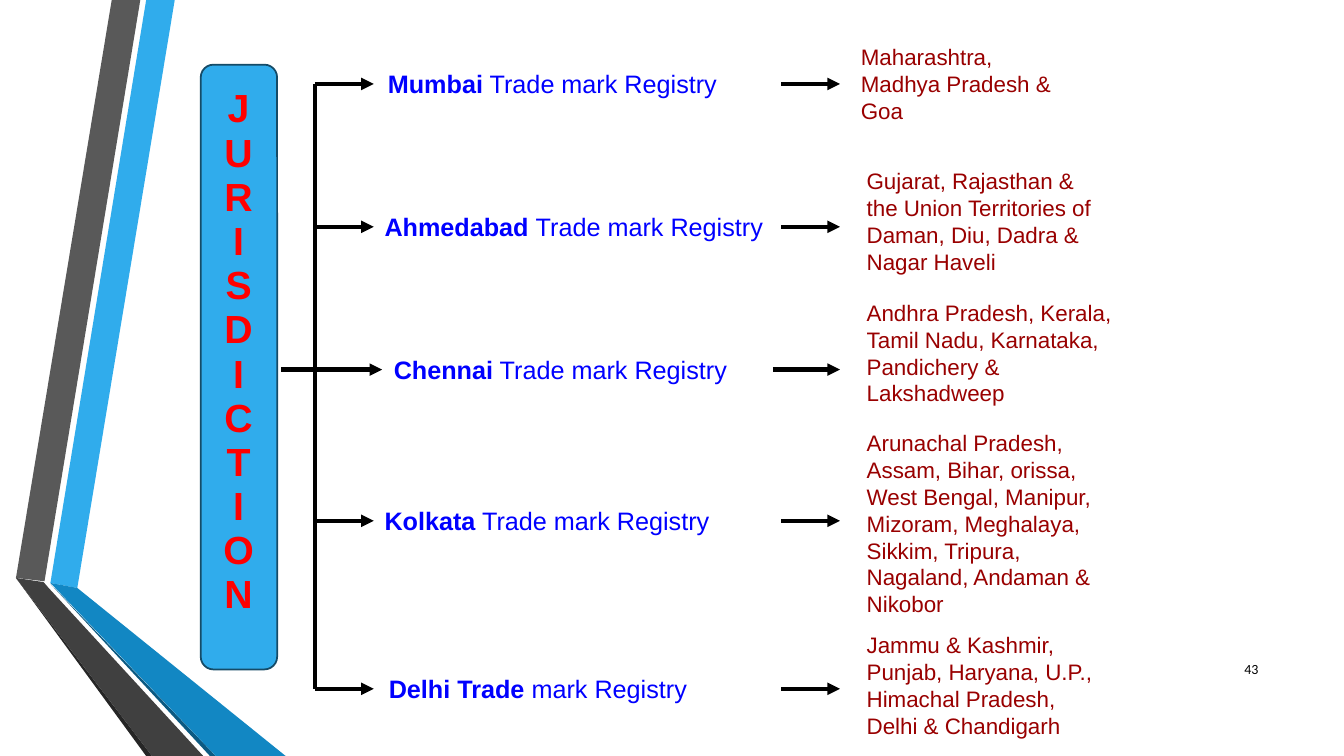
from lxml.etree import SubElement
from pptx import Presentation
from pptx.dml.color import RGBColor
from pptx.enum.shapes import MSO_CONNECTOR as Link, MSO_SHAPE as Preset
from pptx.enum.text import MSO_ANCHOR as Anchor, PP_ALIGN as Align
from pptx.oxml.ns import qn
from pptx.util import Inches, Pt

COLUMNS, ROWS = 160, 90
CELL = Inches(7.5) / ROWS
COLORS = {
    "sky": "30ACEC", "ocean": "1287C3", "deep": "0C5A82", "navy": "154B67",
    "gray": "595959", "charcoal": "404040", "coal": "262626", "black": "000000",
    "red": "FF0000", "blue": "0000FF", "maroon": "990000",
}
RIBBONS = [
    ("sky", [(6, 69.4), (9.2, 70), (20.8, 0), (17.4, 0)]),
    ("gray", [(16.7, 0), (13.3, 0), (1.9, 68.8), (5.3, 69.2)]),
    ("coal", [(1.9, 68.8), (17.4, 90), (18.1, 90)]),
    ("deep", [(6, 69.5), (25, 90), (25.7, 90)]),
    ("ocean", [(6, 69.4), (25.7, 90), (34, 90), (9.2, 70)]),
    ("charcoal", [(24.2, 90), (5.8, 70), (5.2, 69.3), (1.9, 68.8), (18.1, 90)]),
]
TRUNK, BRANCH_END = 37.5, 44.5
REGISTRIES = [
    (10, 45, "Mumbai", " Trade mark Registry", (101.3, 4.6, 28, 10.8),
     "Maharashtra, Madhya Pradesh & Goa"),
    (27, 44.6, "Ahmedabad ", "Trade mark Registry", (102, 19.3, 31, 14),
     "Gujarat, Rajasthan & the Union Territories of Daman, Diu, Dadra & Nagar Haveli"),
    (44, 45.7, "Chennai", " Trade mark Registry", (102, 35, 33, 14),
     "Andhra Pradesh, Kerala, Tamil Nadu, Karnataka, Pandichery & Lakshadweep"),
    (62, 44.6, "Kolkata", " Trade mark Registry", (102, 50.5, 32, 23.6),
     "Arunachal Pradesh, Assam, Bihar, orissa, West Bengal, Manipur, Mizoram, "
     "Meghalaya, Sikkim, Tripura, Nagaland, Andaman & Nikobor"),
    (82, 45.1, "Delhi Trade", " mark Registry", (102, 74.6, 31, 14),
     "Jammu & Kashmir, Punjab, Haryana, U.P., Himachal Pradesh, Delhi & Chandigarh"),
]


def grid(*cells):
    return [round(cell * CELL) for cell in cells]


def color(name):
    return RGBColor.from_string(COLORS[name])


def paint(shape, fill, outline=None):
    shape.shadow.inherit = False
    shape.fill.solid()
    shape.fill.fore_color.rgb = color(fill)
    if outline:
        shape.line.color.rgb = color(outline)
        shape.line.width = Pt(1.25)
    else:
        shape.line.fill.background()


def add_ribbon(slide, fill, corners):
    start, *others = [tuple(grid(*corner)) for corner in corners]
    builder = slide.shapes.build_freeform(*start, scale=1.0)
    builder.add_line_segments(others, close=True)
    paint(builder.convert_to_shape(), fill)


def add_line(slide, start, end, arrow=True):
    line = slide.shapes.add_connector(Link.STRAIGHT, *grid(*start, *end))
    line.line.color.rgb = color("black")
    line.line.width = Pt(3)
    if arrow:
        SubElement(line.line._get_or_add_ln(), qn("a:tailEnd"), type="triangle")
    SubElement(line._element.spPr, qn("a:effectLst"))


def add_text(slide, area, paragraphs, size, ink, font="Arial", align=Align.LEFT,
             anchor=Anchor.TOP, spacing=None, gap=0, inset=0.05):
    frame = slide.shapes.add_textbox(*grid(*area)).text_frame
    frame.word_wrap = True
    frame.vertical_anchor = anchor
    frame.margin_top = Inches(inset)
    for index, runs in enumerate(paragraphs):
        paragraph = frame.add_paragraph() if index else frame.paragraphs[0]
        paragraph.alignment = align
        paragraph.line_spacing = spacing
        paragraph.space_before = Pt(gap if index else 0)
        for words, bold in runs:
            run = paragraph.add_run()
            run.text = words
            run.font.name = font
            run.font.size = Pt(size)
            run.font.bold = bold
            run.font.color.rgb = color(ink)


def add_registry(slide, row, left, city, office, area, territories):
    width = 48 if city.startswith("Ahmedabad") else 45
    add_text(slide, (left, row - 2.4, width, 4.8),
             [[(city, True), (office, False)]], 18, "blue")
    add_line(slide, (92 if row == 44 else 93, row), (100, row))
    add_text(slide, area, [[(territories, False)]], 16, "maroon")


def main():
    deck = Presentation()
    deck.slide_width, deck.slide_height = grid(COLUMNS, ROWS)
    slide = deck.slides.add_slide(deck.slide_layouts[6])
    for fill, corners in RIBBONS:
        add_ribbon(slide, fill, corners)

    banner = slide.shapes.add_shape(Preset.ROUNDED_RECTANGLE, *grid(23.9, 7.7, 9.1, 72))
    paint(banner, "sky", "navy")
    add_text(slide, (23.9, 11.2, 9, 66.6), [[(letter, True)] for letter in "JURISDICTION"],
             28, "red", align=Align.CENTER, spacing=0.5, gap=14.75, inset=0.1)
    add_text(slide, (143.8, 77.2, 7.2, 4.8), [[("43", False)]], 10, "black",
             font="Calibri", align=Align.RIGHT, anchor=Anchor.MIDDLE)

    rows = [registry[0] for registry in REGISTRIES]
    add_line(slide, (TRUNK, rows[0]), (TRUNK, rows[-1]), arrow=False)
    for row in rows:
        start, end = (33.5, 45.5) if row == 44 else (TRUNK, BRANCH_END)
        add_line(slide, (start, row), (end, row))
    for registry in REGISTRIES:
        add_registry(slide, *registry)
    deck.save("out.pptx")


if __name__ == "__main__":
    main()
